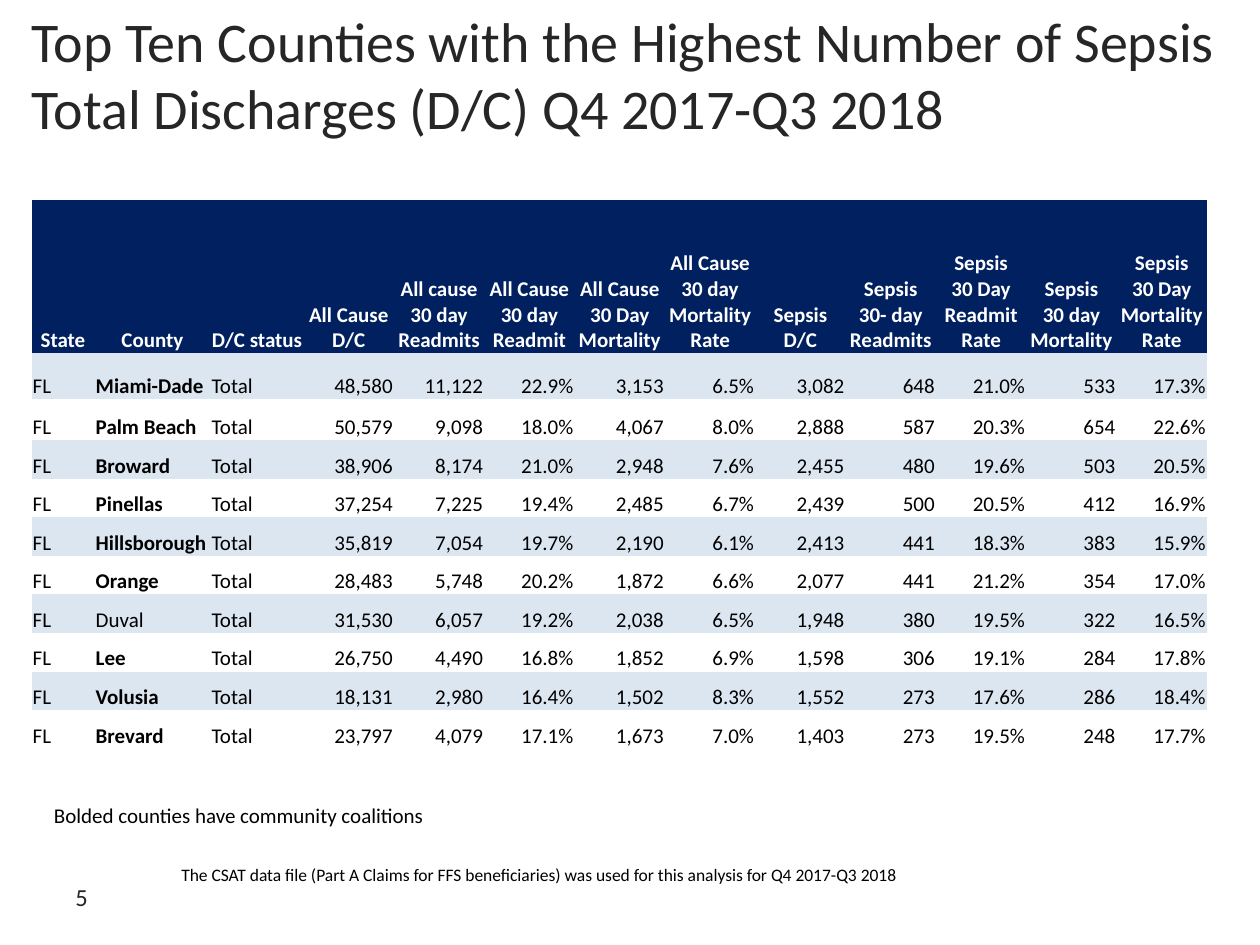
from dataclasses import dataclass

from lxml.etree import SubElement
from pptx import Presentation
from pptx.dml.color import RGBColor
from pptx.enum.text import MSO_ANCHOR, PP_ALIGN
from pptx.oxml.ns import qn
from pptx.util import Inches, Pt

SLIDE_W, SLIDE_H = Inches(10), Inches(7.5)
COL, ROW = SLIDE_W / 100, SLIDE_H / 75
FONT = "Calibri"
NO_STYLE = "{2D5ABB26-0587-4C30-8999-92F81FD0307C}"
COLORS = {
    "ink": "262626",
    "black": "000000",
    "white": "FFFFFF",
    "header": "002060",
    "band": "DCE6F1",
}


@dataclass(frozen=True)
class Box:
    col: float
    row: float
    cols: float
    rows: float

    def emu(self) -> tuple[int, ...]:
        return (int(self.col * COL), int(self.row * ROW),
                int(self.cols * COL), int(self.rows * ROW))


@dataclass(frozen=True)
class County:
    name: str
    values: str
    coalition: bool = True

    def cells(self) -> list[str]:
        return ["FL", self.name, "Total", *self.values.split()]


@dataclass(frozen=True)
class Note:
    text: str
    box: Box
    size: int
    color: str = "black"
    anchor: MSO_ANCHOR = MSO_ANCHOR.TOP
    inset: float = 0.1


HEADERS = [
    "State", "County", "D/C status", "All Cause D/C",
    "All cause 30 day Readmits", "All Cause 30 day Readmit",
    "All Cause 30 Day Mortality", "All Cause 30 day Mortality Rate",
    "Sepsis D/C", "Sepsis\v30- day Readmits", "Sepsis\v30 Day Readmit Rate",
    "Sepsis\v30 day Mortality", "Sepsis\v30 Day Mortality Rate",
]
COUNTIES = [
    County("Miami-Dade", "48,580 11,122 22.9% 3,153 6.5% 3,082 648 21.0% 533 17.3%"),
    County("Palm Beach", "50,579 9,098 18.0% 4,067 8.0% 2,888 587 20.3% 654 22.6%"),
    County("Broward", "38,906 8,174 21.0% 2,948 7.6% 2,455 480 19.6% 503 20.5%"),
    County("Pinellas", "37,254 7,225 19.4% 2,485 6.7% 2,439 500 20.5% 412 16.9%"),
    County("Hillsborough", "35,819 7,054 19.7% 2,190 6.1% 2,413 441 18.3% 383 15.9%"),
    County("Orange", "28,483 5,748 20.2% 1,872 6.6% 2,077 441 21.2% 354 17.0%"),
    County("Duval", "31,530 6,057 19.2% 2,038 6.5% 1,948 380 19.5% 322 16.5%", False),
    County("Lee", "26,750 4,490 16.8% 1,852 6.9% 1,598 306 19.1% 284 17.8%"),
    County("Volusia", "18,131 2,980 16.4% 1,502 8.3% 1,552 273 17.6% 286 18.4%"),
    County("Brevard", "23,797 4,079 17.1% 1,673 7.0% 1,403 273 19.5% 248 17.7%"),
]
TABLE = Box(2.5, 15.85, 93.3, 43.6)
LABEL_COLS = [5, 9.2, 7.4]
TOP_ROWS = [12.2, 3.6, 3.3]
NOTES = [
    Note("Top Ten Counties with the Highest Number of Sepsis Total Discharges (D/C) Q4 2017-Q3 2018",
         Box(2.5, 0, 95, 11.7), 32, "ink", MSO_ANCHOR.MIDDLE, 0),
    Note("5", Box(5, 68.3, 8.3, 5.8), 14, "ink", MSO_ANCHOR.MIDDLE),
    Note("The CSAT data file (Part A Claims for FFS beneficiaries) was used for this analysis for Q4 2017-Q3 2018",
         Box(13.4, 68.1, 63.2, 2.7), 10),
    Note("Bolded counties have community coalitions", Box(3.3, 63.2, 58.3, 3), 12),
]


def write(tf, text: str, *, size: int, color: str = "black", bold: bool = False,
          align: PP_ALIGN = PP_ALIGN.LEFT) -> None:
    p = tf.paragraphs[0]
    p.text = text
    p.alignment = align
    for r in p.runs:
        r.font.name = FONT
        r.font.size = Pt(size)
        r.font.bold = bold
        r.font.color.rgb = RGBColor.from_string(COLORS[color])
    for br in p._p.findall(qn("a:br")):
        SubElement(br, qn("a:rPr"), sz=str(size * 100))


def add_note(s, note: Note) -> None:
    tf = s.shapes.add_textbox(*note.box.emu()).text_frame
    tf.word_wrap = True
    tf.vertical_anchor = note.anchor
    tf.margin_left = tf.margin_right = Inches(note.inset)
    write(tf, note.text, size=note.size, color=note.color)


def fill_cell(cell, text: str, fill: str | None, **fmt) -> None:
    cell.vertical_anchor = MSO_ANCHOR.BOTTOM
    cell.margin_left = cell.margin_right = cell.margin_top = Inches(0.01)
    cell.margin_bottom = 0
    if fill:
        cell.fill.solid()
        cell.fill.fore_color.rgb = RGBColor.from_string(COLORS[fill])
    else:
        cell.fill.background()
    write(cell.text_frame, text, size=12, **fmt)


def spread(fixed: list[float], count: int, total: float) -> list[float]:
    rest = count - len(fixed)
    return fixed + [(total - sum(fixed)) / rest] * rest


def add_county_table(s) -> None:
    n_rows, n_cols = len(COUNTIES) + 1, len(HEADERS)
    table = s.shapes.add_table(n_rows, n_cols, *TABLE.emu()).table
    table.first_row = table.horz_banding = False
    table._tbl.tblPr.find(qn("a:tableStyleId")).text = NO_STYLE
    for column, width in zip(table.columns, spread(LABEL_COLS, n_cols, TABLE.cols)):
        column.width = int(width * COL)
    for row, height in zip(table.rows, spread(TOP_ROWS, n_rows, TABLE.rows)):
        row.height = int(height * ROW)
    for j, header in enumerate(HEADERS):
        fill_cell(table.cell(0, j), header, "header", color="white", bold=True,
                  align=PP_ALIGN.CENTER)
    for i, county in enumerate(COUNTIES, start=1):
        for j, text in enumerate(county.cells()):
            fill_cell(table.cell(i, j), text, "band" if i % 2 else None,
                      bold=county.coalition and j == 1,
                      align=PP_ALIGN.LEFT if j < len(LABEL_COLS) else PP_ALIGN.RIGHT)


def main() -> None:
    prs = Presentation()
    prs.slide_width, prs.slide_height = SLIDE_W, SLIDE_H
    s = prs.slides.add_slide(prs.slide_layouts[6])
    add_county_table(s)
    for note in NOTES:
        add_note(s, note)
    prs.save("out.pptx")


if __name__ == "__main__":
    main()
